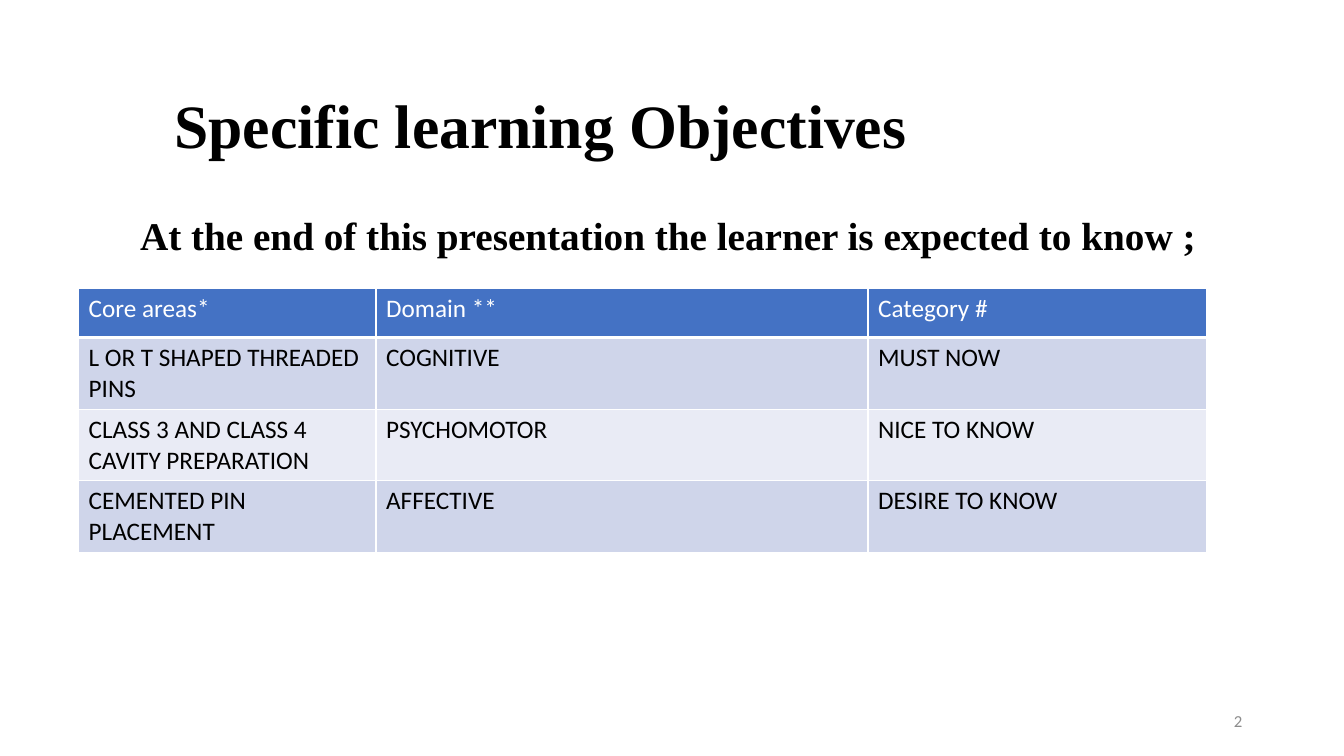
"""Build the learning objectives slide."""
from dataclasses import dataclass

from lxml import etree
from pptx import Presentation
from pptx import util as u
from pptx.dml.color import RGBColor
from pptx.enum import text
from pptx.oxml import ns


@dataclass(frozen=True)
class Theme:
    """Hold the colours, fonts and type sizes."""
    ink: str = "000000"
    paper: str = "FFFFFF"
    muted: str = "8C8C8C"
    header: str = "4472C4"
    bands: tuple = ("CFD5EA", "E9EBF5")
    heading_font: str = "Times New Roman"
    body_font: str = "Calibri"
    title_size: int = 44
    lead_size: int = 28
    table_size: int = 18
    number_size: int = 12


def write(frame, words, *, size, font, color, bold=False,
          align=text.PP_ALIGN.LEFT, anchor=text.MSO_ANCHOR.TOP, spacing=None):
    """Put formatted words into a text frame."""
    frame.word_wrap = True
    frame.vertical_anchor = anchor
    paragraph = frame.paragraphs[0]
    paragraph.alignment = align
    paragraph.line_spacing = spacing
    run = paragraph.add_run()
    run.text = words
    run.font.size = u.Pt(size)
    run.font.name = font
    run.font.bold = bold
    run.font.color.rgb = RGBColor.from_string(color)


class SlideBuilder:
    """Add styled elements to the current slide."""

    def __init__(self, slide, theme):
        """Keep the slide and its theme."""
        self.slide = slide
        self.theme = theme

    def title(self, words, left, top, width, height):
        """Place and fill the title placeholder."""
        shape = self.slide.shapes.title
        shape.left, shape.top = u.Inches(left), u.Inches(top)
        shape.width, shape.height = u.Inches(width), u.Inches(height)
        write(shape.text_frame, words, size=self.theme.title_size,
              font=self.theme.heading_font, color=self.theme.ink, bold=True,
              anchor=text.MSO_ANCHOR.MIDDLE, spacing=0.9)

    def text_box(self, words, left, top, width, height, **style):
        """Add a text box."""
        box = self.slide.shapes.add_textbox(
            u.Inches(left), u.Inches(top), u.Inches(width), u.Inches(height))
        write(box.text_frame, words, **style)

    def table(self, rows, left, top, widths, heights):
        """Add a table with a header and banded rows."""
        table = self.slide.shapes.add_table(
            len(rows), len(widths), u.Inches(left), u.Inches(top),
            u.Inches(sum(widths)), u.Inches(sum(heights))).table
        for column, width in zip(table.columns, widths):
            column.width = u.Inches(width)
        for index, (row, height) in enumerate(zip(rows, heights)):
            table.rows[index].height = u.Inches(height)
            for column, words in enumerate(row):
                self.cell(table.cell(index, column), words, index)

    def cell(self, cell, words, row):
        """Fill one cell according to its row."""
        theme = self.theme
        is_header = row == 0
        fill = theme.header if is_header else theme.bands[(row - 1) % 2]
        cell.fill.solid()
        cell.fill.fore_color.rgb = RGBColor.from_string(fill)
        write(cell.text_frame, words, size=theme.table_size,
              font=theme.body_font, color=theme.paper if is_header else theme.ink)
        borders = {"lnL": 1, "lnR": 1, "lnT": 3 if row == 1 else 1,
                   "lnB": 3 if is_header else 1}
        properties = cell._tc.get_or_add_tcPr()
        for position, (side, points) in enumerate(borders.items()):
            line = etree.Element(ns.qn(f"a:{side}"), w=str(u.Pt(points)))
            solid = etree.SubElement(line, ns.qn("a:solidFill"))
            etree.SubElement(solid, ns.qn("a:srgbClr"), val=theme.paper)
            properties.insert(position, line)


def main():
    """Build and save the presentation."""
    presentation = Presentation()
    presentation.slide_width = u.Inches(13.33)
    presentation.slide_height = u.Inches(7.5)
    slide = presentation.slides.add_slide(presentation.slide_layouts[5])
    theme = Theme()
    builder = SlideBuilder(slide, theme)

    builder.title("Specific learning Objectives", 1.63, 0.67, 10.13, 1.21)
    builder.table(
        [("Core areas*", "Domain **", "Category #"),
         ("L OR T SHAPED THREADED PINS", "COGNITIVE", "MUST NOW"),
         ("CLASS 3 AND CLASS 4 CAVITY PREPARATION", "PSYCHOMOTOR", "NICE TO KNOW"),
         ("CEMENTED PIN PLACEMENT", "AFFECTIVE", "DESIRE TO KNOW")],
        0.78, 2.86, widths=(2.95, 4.88, 3.36), heights=(0.49, 0.71, 0.71, 0.71))
    builder.text_box(
        "At the end of this presentation the learner is expected to know ;",
        1.29, 2.05, 10.71, 0.57, size=theme.lead_size,
        font=theme.heading_font, color=theme.ink, bold=True)
    builder.text_box(
        "2", 9.42, 6.95, 3, 0.4, size=theme.number_size, font=theme.body_font,
        color=theme.muted, align=text.PP_ALIGN.RIGHT, anchor=text.MSO_ANCHOR.MIDDLE)
    presentation.save("out.pptx")


if __name__ == "__main__":
    main()
